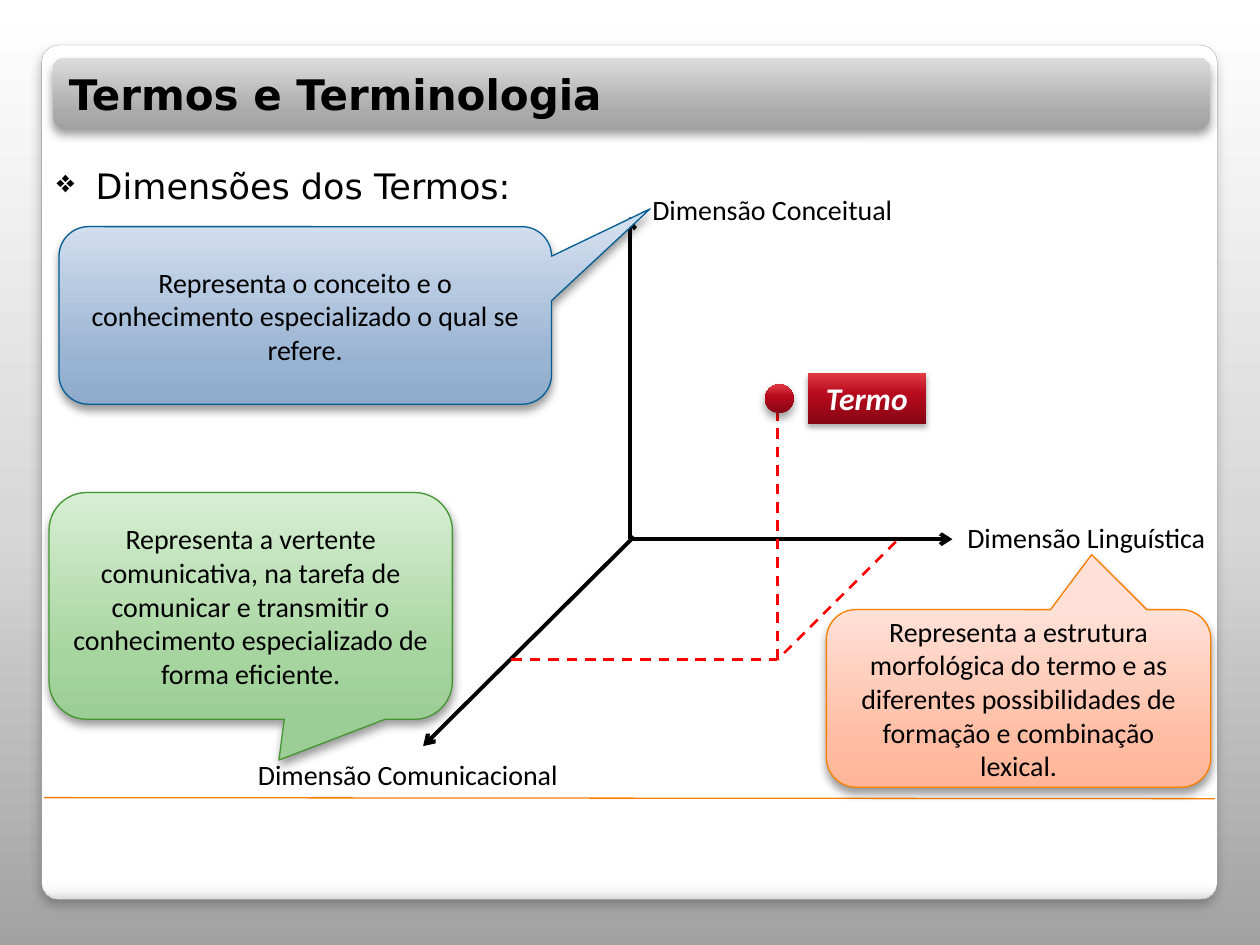
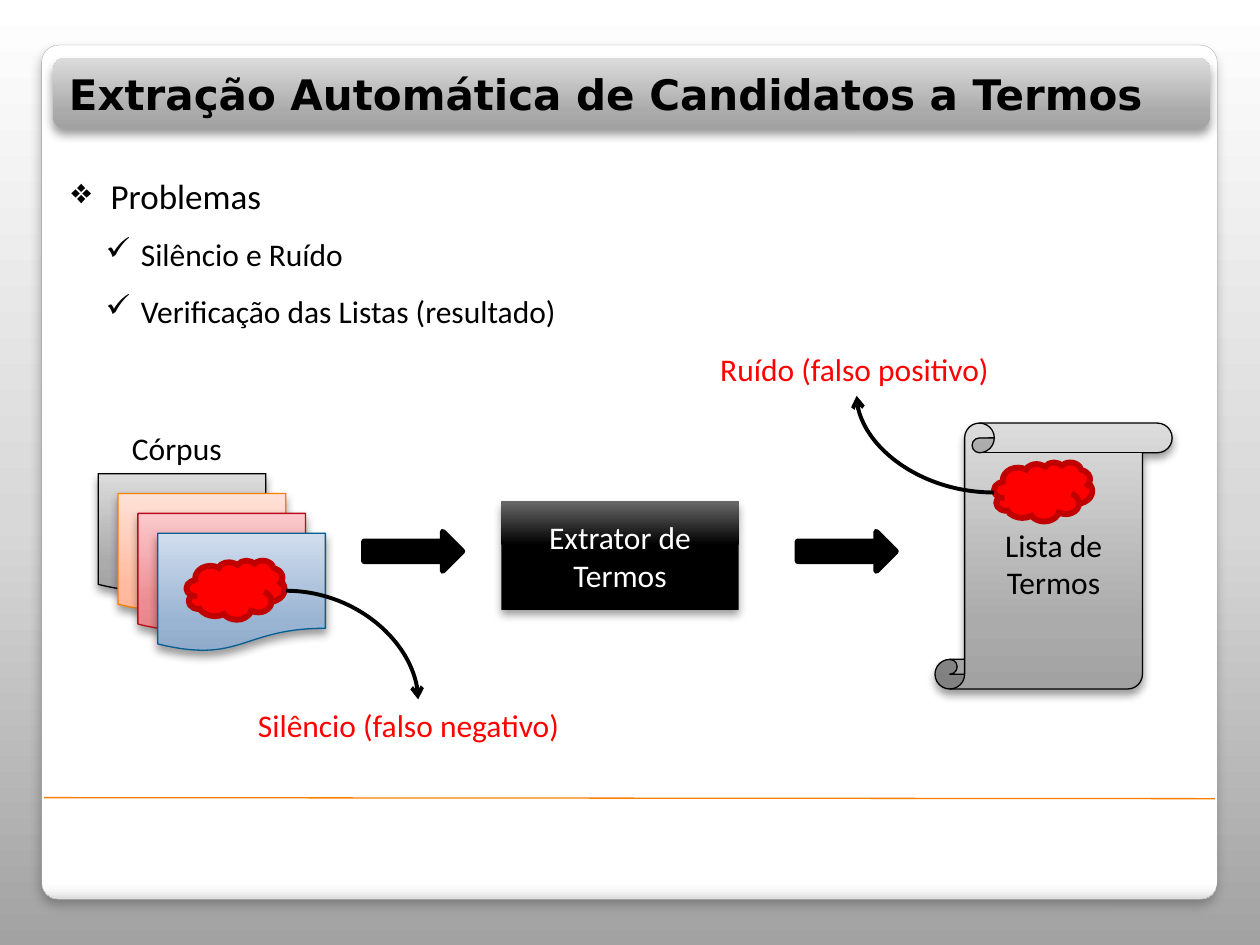
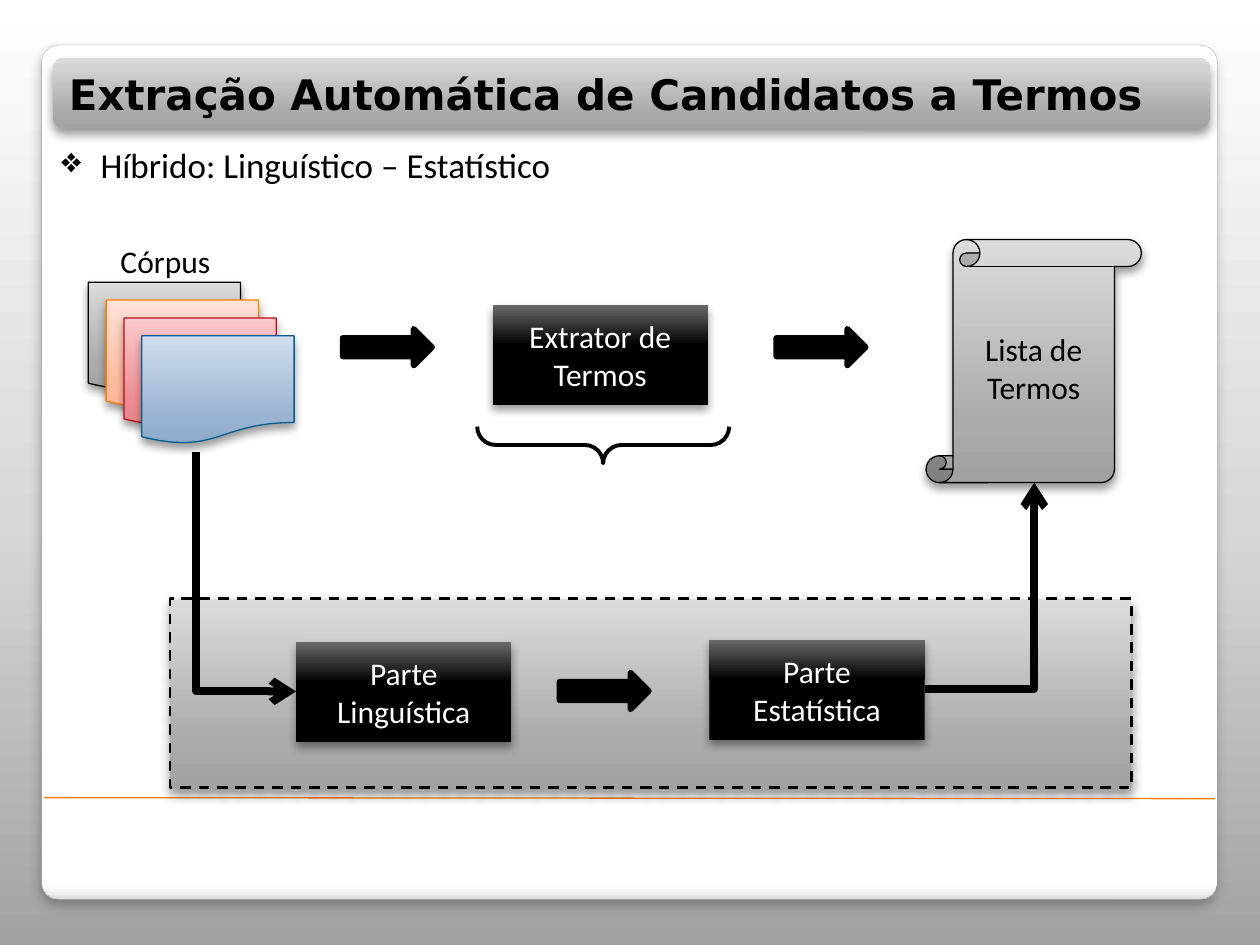
"""Build three slides on terms and automatic extraction of term candidates."""
from dataclasses import dataclass
from typing import NamedTuple, Optional

from lxml.etree import SubElement
from pptx import Presentation
from pptx.dml.color import RGBColor
from pptx.enum.dml import MSO_LINE
from pptx.enum.shapes import MSO_CONNECTOR as Link, MSO_SHAPE as Shape
from pptx.enum.text import MSO_ANCHOR as Anchor, PP_ALIGN as Align
from pptx.oxml.ns import qn
from pptx.util import Cm, Pt


class Gradient(NamedTuple):
    stops: tuple
    angle: int = 90


class Shadow(NamedTuple):
    opacity: int
    blur: float
    distance: float


class Box(NamedTuple):
    x: float
    y: float
    w: float
    h: float


class Stroke(NamedTuple):
    color: str
    width: float
    dashed: bool = False


class TextStyle(NamedTuple):
    size: int
    color: str = "000000"
    font: str = "Calibri"
    bold: bool = False
    italic: bool = False
    align: Align = Align.LEFT
    anchor: Anchor = Anchor.TOP


@dataclass(frozen=True)
class Look:
    fill: object = None
    stroke: Optional[Stroke] = None
    shadow: Optional[Shadow] = None


def soft(*colors: str) -> Gradient:
    """Return the upward gradient of the pale shapes."""
    return Gradient(tuple(zip((0, 25, 100), colors)))


def glossy(*colors: str) -> Gradient:
    """Return the upward gradient of the dark shapes."""
    return Gradient(tuple(zip((0, 60, 100), colors)))


DROP = Shadow(40, 5.2, 3)
GRAY = soft("A2A2A2", "ABABAB", "DCDCDC")
RED = glossy("870614", "B80B1E", "E13C45")


@dataclass(frozen=True)
class Theme:
    """Colours, looks and type styles of the deck."""
    background = Gradient(((0, "A2A2A2"), (45, "D8D8D8"), (100, "FFFFFF")))
    panel = Look(Gradient(((0, "FFFFFF"), (98, "FFFFFF"), (99, "F7F7F7"), (100, "DADADA")), 270),
                 Stroke("A4A4A4", 0.16), Shadow(25, 6, 4))
    band = Look(GRAY, None, DROP)
    gray = Look(GRAY, Stroke("000000", 0.75), DROP)
    orange = Look(soft("FFB598", "FFBCA2", "FFE1D8"), Stroke("F97F00", 0.75), DROP)
    pink = Look(soft("E68589", "EC8D92", "FBCACC"), Stroke("BC0B1F", 0.75), DROP)
    blue = Look(soft("90ABCB", "99B3D2", "D1DEEE"), Stroke("035E94", 0.75), DROP)
    green = Look(soft("9DCD96", "A5D49E", "D7EED3"), Stroke("439631", 0.75), DROP)
    black = Look(glossy("000000", "000000", "696969"), None, DROP)
    term = Look(RED, None, Shadow(32, 3.5, 2.2))
    dot = Look(RED, None, DROP)
    frame = Look(GRAY, Stroke("000000", 1.5, True), DROP)
    arrow = Look("000000", Stroke("000000", 3.35))
    cloud = Look("FF0000", Stroke("C00000", 3.35))
    brace = Look(None, Stroke("000000", 2.25))
    rule = Stroke("F97F00", 0.75)
    axis = Stroke("000000", 2.25)
    projection = Stroke("FF0000", 1.5, True)
    route = Stroke("000000", 4.5)
    title = TextStyle(24, font="DejaVu Sans", bold=True, anchor=Anchor.MIDDLE)
    heading = TextStyle(20)
    wide_heading = TextStyle(20, font="DejaVu Sans")
    item = TextStyle(18)
    label = TextStyle(16)
    alert = TextStyle(18, "FF0000")
    callout = TextStyle(16, align=Align.CENTER, anchor=Anchor.MIDDLE)
    node = TextStyle(18, "FFFFFF", align=Align.CENTER, anchor=Anchor.MIDDLE)
    scroll = TextStyle(18, align=Align.CENTER, anchor=Anchor.MIDDLE)
    term_text = TextStyle(18, "FFFFFF", bold=True, italic=True, align=Align.CENTER)


T = Theme()


class Callout(NamedTuple):
    box: Box
    look: Look
    tip: tuple
    text: str


class Bullet(NamedTuple):
    text: str
    style: TextStyle
    mark: str = "❖"
    margin: float = 0.79
    hang: float = 0.79
    spacing: float = 1.5
    mark_size: int = 100


class Flow(NamedTuple):
    page: Box
    step: float
    label: Box
    extractor: Box
    result: Box
    arrows: tuple


def paint_gradient(fill, element, gradient: Gradient) -> None:
    """Give a fill the stops and angle of a gradient."""
    fill.gradient()
    fill.gradient_angle = gradient.angle
    stops = next(element.iter(qn("a:gsLst")))
    for old in list(stops):
        stops.remove(old)
    for position, color in gradient.stops:
        stop = SubElement(stops, qn("a:gs"), pos=str(position * 1000))
        SubElement(stop, qn("a:srgbClr"), val=color)


def apply_stroke(line, stroke: Stroke) -> None:
    """Set colour, width and dash of a line."""
    line.color.rgb = RGBColor.from_string(stroke.color)
    line.width = Pt(stroke.width)
    if stroke.dashed:
        line.dash_style = MSO_LINE.DASH


def apply_shadow(sp, shadow: Shadow) -> None:
    """Add a downward shadow to a shape."""
    effects = next(sp.element.iter(qn("a:effectLst")))
    outer = SubElement(effects, qn("a:outerShdw"), blurRad=str(Pt(shadow.blur)),
                       dist=str(Pt(shadow.distance)), dir="5400000", rotWithShape="0")
    color = SubElement(outer, qn("a:srgbClr"), val="000000")
    SubElement(color, qn("a:alpha"), val=str(shadow.opacity * 1000))


def format_runs(p, style: TextStyle) -> None:
    """Format a paragraph and its runs."""
    p.alignment = style.align
    for r in p.runs:
        r.font.size, r.font.name = Pt(style.size), style.font
        r.font.bold, r.font.italic = style.bold, style.italic
        r.font.color.rgb = RGBColor.from_string(style.color)


def write(sp, text: str, style: TextStyle) -> None:
    """Fill a shape with styled text."""
    tf = sp.text_frame
    tf.word_wrap = True
    tf.vertical_anchor = style.anchor
    tf.text = text
    for p in tf.paragraphs:
        format_runs(p, style)


def add_shape(slide, kind: Shape, box: Box, look: Look, text: str = "",
              style: TextStyle = T.node, adjust: tuple = ()):
    """Draw a preset shape with its look and text."""
    sp = slide.shapes.add_shape(kind, *map(Cm, box))
    for i, value in enumerate(adjust):
        sp.adjustments[i] = value
    sp.shadow.inherit = False
    if isinstance(look.fill, Gradient):
        paint_gradient(sp.fill, sp.element, look.fill)
    elif look.fill:
        sp.fill.solid()
        sp.fill.fore_color.rgb = RGBColor.from_string(look.fill)
    else:
        sp.fill.background()
    if look.stroke:
        apply_stroke(sp.line, look.stroke)
    else:
        sp.line.fill.background()
    if look.shadow:
        apply_shadow(sp, look.shadow)
    if text:
        write(sp, text, style)
    return sp


def add_label(slide, box: Box, text: str, style: TextStyle) -> None:
    """Place a plain text box."""
    write(slide.shapes.add_textbox(*map(Cm, box)), text, style)


def add_line(slide, start: tuple, end: tuple, stroke: Stroke, arrow: str = "",
             kind: Link = Link.STRAIGHT, preset: str = "line") -> None:
    """Draw a connector, with an arrow at the named end."""
    cx = slide.shapes.add_connector(kind, *map(Cm, start + end))
    next(cx.element.iter(qn("a:prstGeom"))).set("prst", preset)
    apply_stroke(cx.line, stroke)
    if arrow:
        SubElement(next(cx.element.iter(qn("a:ln"))), qn(f"a:{arrow}"), type="arrow")
    SubElement(cx.element.spPr, qn("a:effectLst"))


def add_bullets(slide, box: Box, bullets: list[Bullet]) -> None:
    """Write a bulleted list."""
    tf = slide.shapes.add_textbox(*map(Cm, box)).text_frame
    tf.word_wrap = True
    for i, bullet in enumerate(bullets):
        p = tf.add_paragraph() if i else tf.paragraphs[0]
        p.text = bullet.text
        p.line_spacing = bullet.spacing
        pPr = p._p.get_or_add_pPr()
        pPr.set("marL", str(Cm(bullet.margin)))
        pPr.set("indent", str(-Cm(bullet.hang)))
        SubElement(pPr, qn("a:buSzPct"), val=str(bullet.mark_size * 1000))
        SubElement(pPr, qn("a:buChar"), char=bullet.mark)
        format_runs(p, bullet.style)


def add_slide(prs, title: str):
    """Add a slide with panel, rule and title band."""
    slide = prs.slides.add_slide(prs.slide_layouts[6])
    add_shape(slide, Shape.ROUNDED_RECTANGLE, Box(0.84, 0.91, 23.7, 17.22), T.panel, adjust=(0.02,))
    add_line(slide, (0.89, 16.08), (24.49, 16.1), T.rule)
    add_shape(slide, Shape.ROUNDED_RECTANGLE, Box(1.07, 1.17, 23.32, 1.42), T.band, title, T.title)
    return slide


def add_flow(slide, flow: Flow) -> None:
    """Draw the way from corpus through extractor to term list."""
    for i, look in enumerate((T.gray, T.orange, T.pink, T.blue)):
        x, y, w, h = flow.page
        page = Box(x + i * flow.step, y + i * flow.step, w, h)
        add_shape(slide, Shape.FLOWCHART_DOCUMENT, page, look)
    add_label(slide, flow.label, "Córpus", T.item)
    add_shape(slide, Shape.RECTANGLE, flow.extractor, T.black, "Extrator de\nTermos")
    add_shape(slide, Shape.VERTICAL_SCROLL, flow.result, T.gray, "Lista de\nTermos", T.scroll)
    for arrow in flow.arrows:
        add_shape(slide, Shape.RIGHT_ARROW, arrow, T.arrow)


def dimensions_slide(prs) -> None:
    """Show the three dimensions of a term."""
    slide = add_slide(prs, "Termos e Terminologia")
    add_bullets(slide, Box(0.89, 2.77, 23.32, 1.37),
                [Bullet("Dimensões dos Termos:", T.wide_heading, mark_size=90)])
    origin = (12.7, 10.87)
    for start, end in ((origin, (12.7, 4.37)), (origin, (19.2, 10.87)),
                       ((12.78, 10.82), (8.53, 15.04))):
        add_line(slide, start, end, T.axis, "tailEnd")
    add_shape(slide, Shape.RECTANGLE, Box(16.28, 7.52, 2.39, 1.02), T.term, "Termo", T.term_text)
    for box, name in ((Box(12.9, 3.76, 6.15, 0.94), "Conceitual"),
                      (Box(19.25, 10.36, 5.56, 0.94), "Linguística"),
                      (Box(4.95, 15.14, 7.75, 0.94), "Comunicacional")):
        add_label(slide, box, f"Dimensão {name}", T.label)
    foot = (15.67, 13.3)
    for start in ((10.31, 13.3), (18.06, 10.92)):
        add_line(slide, start, foot, T.projection)
    add_line(slide, foot, (15.67, 7.92), T.projection)
    add_shape(slide, Shape.OVAL, Box(15.42, 7.75, 0.58, 0.58), T.dot)
    callouts = (
        Callout(Box(16.66, 12.29, 7.75, 3.58), T.orange, (0.19, -0.81),
                "Representa a estrutura morfológica do termo e as diferentes "
                "possibilidades de formação e combinação lexical."),
        Callout(Box(0.99, 9.93, 8.13, 4.57), T.green, (0.07, 0.68),
                "Representa a vertente comunicativa, na tarefa de comunicar e "
                "transmitir o conhecimento especializado de forma eficiente."),
        Callout(Box(1.19, 4.57, 9.93, 3.58), T.blue, (0.7, -0.6),
                "Representa o conceito e o conhecimento especializado o qual se refere."),
    )
    for c in callouts:
        add_shape(slide, Shape.ROUNDED_RECTANGULAR_CALLOUT, c.box, c.look, c.text, T.callout, c.tip)


def problems_slide(prs) -> None:
    """Show silence and noise in the extraction."""
    slide = add_slide(prs, "Extração Automática de Candidatos a Termos")
    add_flow(slide, Flow(
        page=Box(1.98, 9.55, 3.38, 2.39), step=0.4, label=Box(2.41, 8.53, 2.74, 1.02),
        extractor=Box(10.11, 10.11, 4.78, 2.18), result=Box(18.85, 8.53, 4.78, 5.36),
        arrows=(Box(16.08, 10.72, 1.98, 0.79), Box(7.34, 10.72, 1.98, 0.79))))
    for x, y in ((20.04, 9.32), (3.76, 11.3)):
        add_shape(slide, Shape.CLOUD, Box(x, y, 1.98, 1.19), T.cloud)
    for box, text, start, end in (
            (Box(14.27, 6.93, 5.94, 1.02), "Ruído (falso positivo)", (20.04, 9.93), (17.27, 7.98)),
            (Box(4.95, 14.1, 6.93, 1.02), "Silêncio (falso negativo)", (5.77, 11.91), (8.43, 14.1))):
        add_label(slide, box, text, T.alert)
        add_line(slide, start, end, T.axis, "tailEnd", Link.CURVE, "curvedConnector2")
    add_bullets(slide, Box(1.19, 2.97, 22.43, 3.84), [
        Bullet("Problemas", T.heading),
        *(Bullet(text, T.item, "✓", 1.4, 0.71)
          for text in ("Silêncio e Ruído", "Verificação das Listas (resultado)"))])


def hybrid_slide(prs) -> None:
    """Show the hybrid extractor and its two parts."""
    slide = add_slide(prs, "Extração Automática de Candidatos a Termos")
    add_flow(slide, Flow(
        page=Box(1.78, 5.69, 3.07, 2.18), step=0.36, label=Box(2.18, 4.75, 2.51, 0.94),
        extractor=Box(9.93, 6.15, 4.34, 2.01), result=Box(18.67, 4.83, 4.34, 4.9),
        arrows=(Box(15.65, 6.63, 1.8, 0.74), Box(6.91, 6.63, 1.8, 0.74))))
    brace = add_shape(slide, Shape.LEFT_BRACE, Box(11.79, 6.43, 0.74, 5.08), T.brace, adjust=(0.5, 0.5))
    brace.rotation = 270
    add_shape(slide, Shape.RECTANGLE, Box(3.43, 12.07, 19.38, 3.81), T.frame)
    for x, y, name in ((14.3, 12.9, "Estatística"), (5.97, 12.95, "Linguística")):
        add_shape(slide, Shape.RECTANGLE, Box(x, y, 4.34, 2.01), T.black, f"Parte {name}")
    add_shape(slide, Shape.RIGHT_ARROW, Box(11.28, 13.56, 1.8, 0.74), T.arrow)
    for start, end, arrow in (((18.64, 13.89), (20.85, 9.73), "tailEnd"),
                              ((5.97, 13.94), (3.96, 9.12), "headEnd")):
        add_line(slide, start, end, T.route, arrow, Link.ELBOW, "bentConnector2")
    add_bullets(slide, Box(0.99, 2.77, 15.29, 1.12),
                [Bullet("Híbrido: Linguístico – Estatístico", T.heading, spacing=1.0)])


def main() -> None:
    """Build and save the deck."""
    prs = Presentation()
    prs.slide_width, prs.slide_height = Cm(25.4), Cm(19.05)
    master = prs.slide_master
    paint_gradient(master.background.fill, master.element, T.background)
    for build in (dimensions_slide, problems_slide, hybrid_slide):
        build(prs)
    prs.save("out.pptx")


if __name__ == "__main__":
    main()
